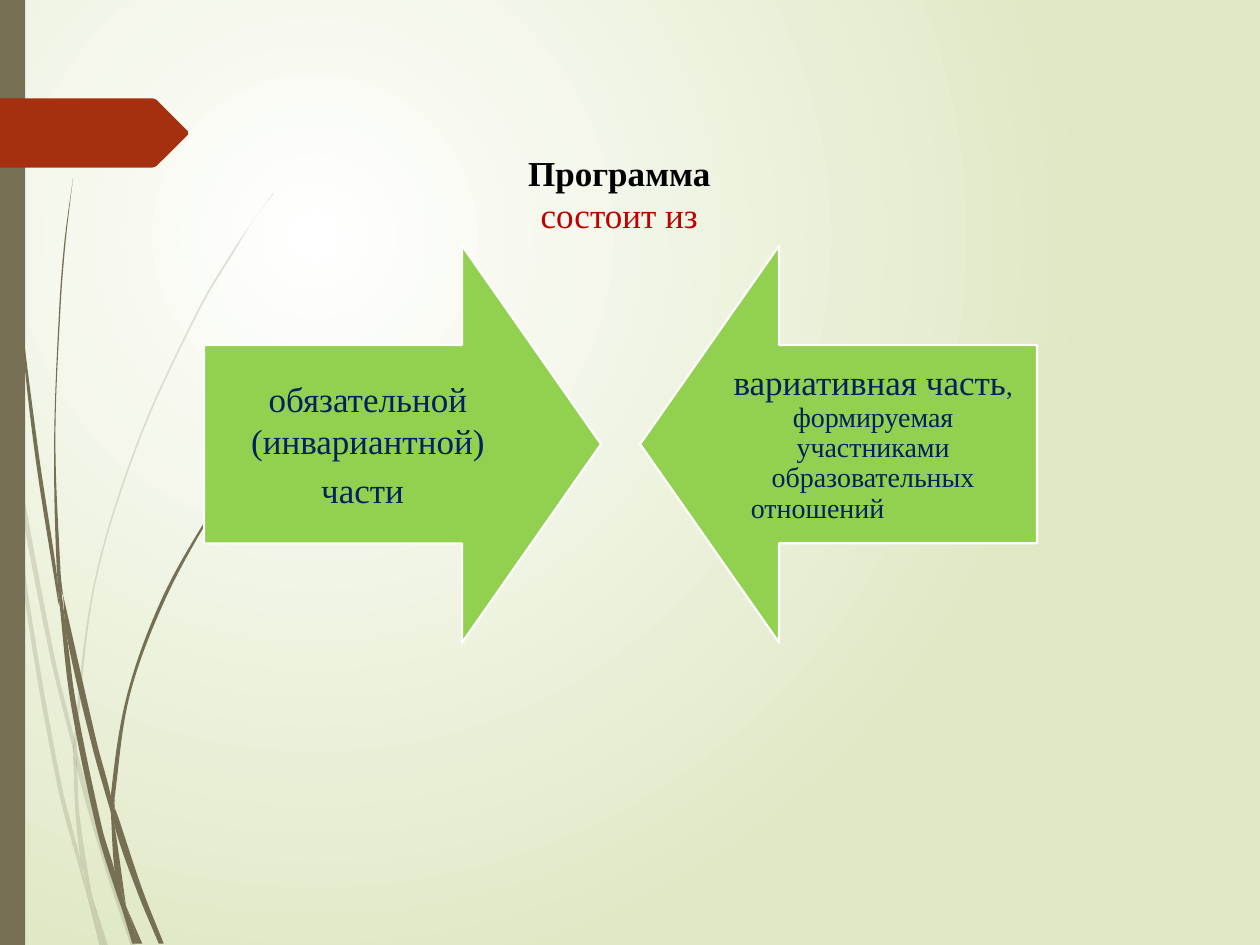
from lxml.etree import SubElement
from pptx import Presentation
from pptx.dml.color import RGBColor
from pptx.enum.shapes import MSO_SHAPE as Shape
from pptx.enum.text import MSO_ANCHOR as Anchor, PP_ALIGN as Align
from pptx.oxml.ns import qn
from pptx.util import Pt

PX = 9144  # 100 px to the inch
SIZE = (1000, 750)
THEME = {
    "font": "Times New Roman",
    "glow": "FFFFFF", "field": "DFE8C4",
    "stem": "766F54", "tab": "A53010",
    "arrow": "92D050", "edge": "FFFFFF", "label": "002060",
    "title": "000000", "subtitle": "C00000",
    "space": 24, "large": 20, "comma": 15, "small": 16,
}

TITLE_BOX = (405, 115, 173, 77)
TITLE = [("Программа", "title", True), ("состоит из", "subtitle", False)]

# Each paragraph: its runs as (text, size name), then its formatting
ARROWS = [
    {"left": 162, "turn": 270, "text_left": 162, "paragraphs": [
        ([("обязательной (инвариантной)", "large")], {}),
        ([("части", "large"), (" ", "space")], {}),
    ]},
    {"left": 508, "turn": 90, "text_left": 563, "paragraphs": [
        ([("вариативная часть", "large"), (", ", "comma"),
          ("формируемая участниками образовательных", "small")], {"spacing": 0.9}),
        ([("отношений", "small")], {"spacing": 0.9, "indent": 17}),
    ]},
]
ARROW_TOP, ARROW_SIDE = 195, 315
LABEL_TOP, LABEL_WIDTH, LABEL_HEIGHT, LABEL_INSET = 274, 260, 158, 16

TAB = [(0, 78), (121, 78), (124, 79), (149, 104), (149, 107), (124, 132), (121, 133), (0, 133)]

# Grass blades: the two edges of each, running between the same ends
PALE_BLADES = [
    ([(0, 282), (6, 322), (8, 350)], [(0, 299), (7, 344), (8, 350)]),
    ([(10, 345), (43, 520), (59, 586)], [(10, 345), (12, 376), (40, 522), (59, 599)]),
    ([(61, 596), (64, 607), (88, 692), (108, 751)],
     [(61, 596), (61, 610), (85, 694), (104, 751)]),
    ([(73, 711), (86, 751)], [(73, 711), (83, 751)]),
    ([(8, 350), (12, 376), (22, 469), (48, 619), (64, 683), (69, 707), (70, 714)],
     [(8, 350), (19, 470), (45, 621), (64, 693), (70, 714)]),
    ([(58, 599), (60, 646), (64, 683), (67, 692), (73, 711)],
     [(58, 599), (61, 610), (63, 646), (72, 706), (73, 711)]),
    ([(217, 153), (201, 175), (186, 197), (158, 244), (110, 348), (75, 461), (59, 584), (61, 596)],
     [(217, 154), (201, 175), (187, 198), (159, 245), (111, 349), (76, 462), (61, 584), (61, 596)]),
    ([(70, 714), (79, 751)], [(70, 714), (82, 751)]),
    ([(59, 586), (58, 599), (61, 610)], [(59, 586), (61, 596), (61, 610)]),
    ([(65, 683), (67, 692), (73, 711), (83, 751)],
     [(65, 683), (69, 707), (70, 714), (82, 751)]),
]
DARK_BLADES = [
    ([(2, 0), (3, 48), (5, 110), (14, 233), (27, 355), (46, 477), (47, 481)],
     [(3, 0), (4, 48), (6, 109), (15, 232), (30, 355), (45, 455), (47, 481)]),
    ([(50, 472), (53, 505), (73, 592), (88, 645)], [(50, 472), (77, 590), (88, 632), (88, 645)]),
    ([(91, 641), (91, 656), (109, 708), (126, 749)],
     [(91, 641), (94, 649), (113, 706), (130, 749)]),
    ([(47, 477), (56, 557), (77, 659), (92, 708), (97, 722)],
     [(47, 477), (53, 505), (60, 556), (81, 657), (91, 691), (97, 722)]),
    ([(58, 141), (51, 193), (47, 245), (43, 349), (45, 449), (49, 472)],
     [(58, 141), (52, 193), (48, 245), (44, 349), (48, 453), (50, 472)]),
    ([(100, 719), (110, 749)], [(100, 719), (113, 749)]),
    ([(45, 449), (47, 477), (53, 505)], [(45, 449), (49, 472), (53, 505)]),
    ([(215, 344), (203, 358), (191, 373), (168, 405), (129, 474), (101, 551), (88, 631), (91, 641)],
     [(216, 344), (203, 359), (191, 374), (169, 406), (131, 476), (103, 552), (91, 633), (91, 641)]),
    ([(97, 722), (105, 749)], [(97, 722), (108, 749)]),
    ([(88, 645), (91, 691), (96, 706), (100, 719)], [(88, 645), (91, 656), (100, 719)]),
    ([(88, 631), (88, 645), (91, 656)], [(88, 631), (91, 641), (91, 656)]),
    ([(91, 691), (97, 722), (108, 749)], [(91, 691), (96, 706), (100, 719), (110, 749)]),
]


def px(*lengths):
    return [round(length * PX) for length in lengths]


def color(name):
    return RGBColor.from_string(THEME[name])


def paint(shape, fill, line=None):
    shape.shadow.inherit = False
    shape.fill.solid()
    shape.fill.fore_color.rgb = color(fill)
    if line:
        shape.line.color.rgb = color(line)
        shape.line.width = Pt(1.25)
    else:
        shape.line.fill.background()
    return shape


def curve_through(points):
    """Give (control, control, end) for each cubic between neighbouring points."""
    slopes = []
    for i in range(len(points)):
        (x0, y0), *_, (x1, y1) = points[max(i - 1, 0):i + 2]
        slopes.append((x1 - x0) / (y1 - y0))
    curves = []
    for (x0, y0), (x1, y1), leave, arrive in zip(points, points[1:], slopes, slopes[1:]):
        third = (y1 - y0) / 3
        curves.append(((x0 + leave * third, y0 + third), (x1 - arrive * third, y1 - third), (x1, y1)))
    return curves


def add_outline(page, points, fill):
    start, *rest = [px(*point) for point in points]
    builder = page.shapes.build_freeform(*start, scale=1.0)
    builder.add_line_segments(rest, close=True)
    return paint(builder.convert_to_shape(), fill)


def add_blade(page, down_edge, up_edge):
    curves = curve_through(down_edge)
    if down_edge[-1] != up_edge[0]:
        curves.append((up_edge[0],))
    curves += curve_through(up_edge)
    blade = add_outline(page, [down_edge[0]] + [curve[-1] for curve in curves], "stem")
    for segment, curve in zip(list(blade._element.iter(qn("a:lnTo"))), curves):
        if len(curve) == 1:
            continue
        cubic = SubElement(segment.getparent(), qn("a:cubicBezTo"))
        for point in curve:
            x, y = px(*point)
            SubElement(cubic, qn("a:pt"), x=str(x - blade.left), y=str(y - blade.top))
        segment.getparent().replace(segment, cubic)
    return blade


def add_blades(page, blades, opacity=100):
    for one_edge, other_edge in blades:
        blade = add_blade(page, one_edge, other_edge[::-1])
        if opacity < 100:
            tint = blade._element.spPr.find(".//" + qn("a:srgbClr"))
            SubElement(tint, qn("a:alpha"), val=str(opacity * 1000))


def set_background(page):
    fill = page.background.fill
    fill.gradient()
    for stop, name, position in zip(fill.gradient_stops, ("glow", "field"), (0, 1)):
        stop.color.rgb = color(name)
        stop.position = position
    gradient = page.element.find(".//" + qn("a:gradFill"))
    gradient.remove(gradient.find(qn("a:lin")))
    circle = SubElement(gradient, qn("a:path"), path="circle")
    SubElement(circle, qn("a:fillToRect"), l="50000", t="50000", r="100000", b="100000")


def set_insets(frame, across, down):
    frame.margin_left = frame.margin_right = px(across)[0]
    frame.margin_top = frame.margin_bottom = px(down)[0]


def next_paragraph(frame, index):
    para = frame.add_paragraph() if index else frame.paragraphs[0]
    para.alignment = Align.CENTER
    para.font.name = THEME["font"]
    return para


def fill_title(page):
    title = page.shapes.title
    title.left, title.top, title.width, title.height = px(*TITLE_BOX)
    frame = title.text_frame
    frame.word_wrap = False
    frame.vertical_anchor = Anchor.TOP
    set_insets(frame, 10, 5)
    for index, (text, name, bold) in enumerate(TITLE):
        para = next_paragraph(frame, index)
        para.text = text
        para.font.size, para.font.bold = Pt(THEME["large"]), bold
        para.font.color.rgb = color(name)


def add_arrow(page, arrow):
    shape = page.shapes.add_shape(
        Shape.DOWN_ARROW, *px(arrow["left"], ARROW_TOP, ARROW_SIDE, ARROW_SIDE))
    shape.adjustments[0], shape.adjustments[1] = 0.5, 0.35
    shape.rotation = arrow["turn"]
    paint(shape, "arrow", "edge")
    label = page.shapes.add_textbox(
        *px(arrow["text_left"], LABEL_TOP, LABEL_WIDTH, LABEL_HEIGHT))
    frame = label.text_frame
    frame.word_wrap = True
    frame.vertical_anchor = Anchor.MIDDLE
    set_insets(frame, LABEL_INSET, LABEL_INSET)
    for index, (spans, style) in enumerate(arrow["paragraphs"]):
        para = next_paragraph(frame, index)
        para.font.color.rgb = color("label")
        para.line_spacing = style.get("spacing", 1.0)
        if "indent" in style:
            para.alignment = Align.LEFT
            para._p.get_or_add_pPr().set("marL", str(style["indent"] * PX))
        for text, size in spans:
            span = para.add_run()
            span.text = text
            span.font.size = Pt(THEME[size])


deck = Presentation()
deck.slide_width, deck.slide_height = px(*SIZE)
page = deck.slides.add_slide(deck.slide_layouts[5])
set_background(page)
add_blades(page, PALE_BLADES, opacity=20)
add_blades(page, DARK_BLADES)
paint(page.shapes.add_shape(Shape.RECTANGLE, *px(0, 0, 20, SIZE[1])), "stem")
add_outline(page, TAB, "tab")
for arrow in ARROWS:
    add_arrow(page, arrow)
fill_title(page)
deck.save("out.pptx")
